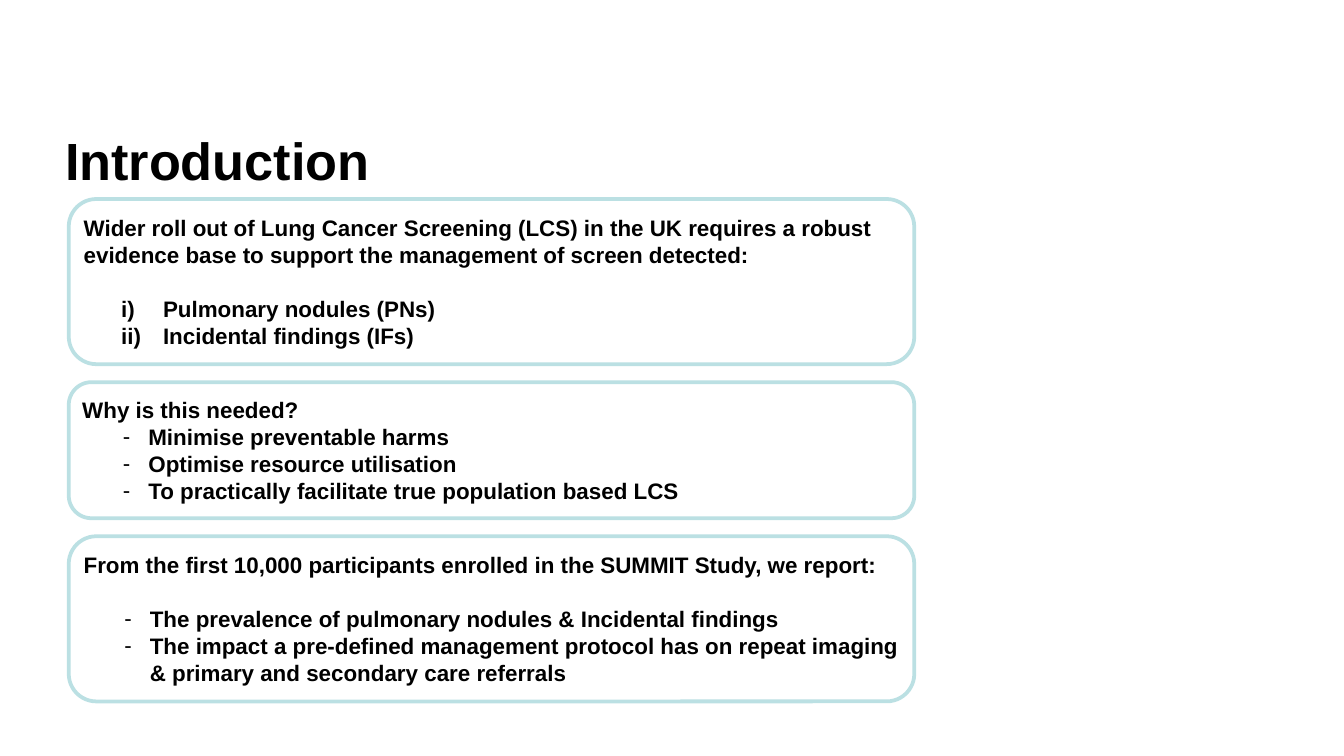
from pptx import Presentation
from pptx.dml.color import RGBColor
from pptx.enum.shapes import MSO_SHAPE as Shape
from pptx.enum.text import MSO_ANCHOR as Anchor, MSO_AUTO_SIZE as AutoSize, PP_ALIGN as Align
from pptx.oxml.ns import qn
from pptx.util import Cm, Pt
from lxml.etree import SubElement

BLACK = RGBColor(0x00, 0x00, 0x00)
WHITE = RGBColor(0xFF, 0xFF, 0xFF)
PALE_TEAL = RGBColor(0xBB, 0xE0, 0xE3)

INSET = Cm(0.13)
FRAME = {
    "word_wrap": True, "auto_size": AutoSize.NONE, "vertical_anchor": Anchor.MIDDLE,
    "margin_left": INSET, "margin_right": INSET, "margin_top": INSET, "margin_bottom": INSET,
}
FONT = {"name": "Arial", "bold": True}
ROMAN = {"tag": "a:buAutoNum", "value": {"type": "romanLcParenR"}, "left": 1.5, "hanging": 0.79}
DASH = {"tag": "a:buChar", "value": {"char": "-"}, "left": 1.25, "hanging": 0.48}

PANELS = [
    (3.12, 14.4, ROMAN,
     "Wider roll out of Lung Cancer Screening (LCS) in the UK requires a robust "
     "evidence base to support the management of screen detected:",
     ["Pulmonary nodules (PNs)", "Incidental findings (IFs)"]),
    (2.57, 0, DASH, "Why is this needed?",
     ["Minimise preventable harms", "Optimise resource utilisation",
      "To practically facilitate true population based LCS"]),
    (3.12, 14.4, DASH,
     "From the first 10,000 participants enrolled in the SUMMIT Study, we report:",
     ["The prevalence of pulmonary nodules & Incidental findings",
      "The impact a pre-defined management protocol has on repeat imaging "
      "& primary and secondary care referrals"]),
]


def format_frame(frame):
    for key, value in FRAME.items():
        setattr(frame, key, value)


def write(paragraph, text, size):
    paragraph.alignment = Align.LEFT
    run = paragraph.add_run()
    run.text = text
    for key, value in FONT.items():
        setattr(run.font, key, value)
    run.font.size = Pt(size)
    run.font.color.rgb = BLACK


deck = Presentation()
deck.slide_width, deck.slide_height = Cm(25.4), Cm(14.28)
slide = deck.slides.add_slide(deck.slide_layouts[5])

heading = slide.shapes.title
heading.left, heading.top, heading.width, heading.height = Cm(1.1), Cm(2.28), Cm(23.2), Cm(1.45)
format_frame(heading.text_frame)
write(heading.text_frame.paragraphs[0], "Introduction", 28)

top, gap = 3.76, 0.34
for height, list_gap, marker, lead, points in PANELS:
    panel = slide.shapes.add_shape(Shape.ROUNDED_RECTANGLE, Cm(1.3), Cm(top), Cm(15.98), Cm(height))
    panel.shadow.inherit = False
    panel.fill.solid()
    panel.fill.fore_color.rgb = WHITE
    panel.line.color.rgb = PALE_TEAL
    panel.line.width = Pt(2)
    format_frame(panel.text_frame)
    write(panel.text_frame.paragraphs[0], lead, 12)
    for index, point in enumerate(points):
        item = panel.text_frame.add_paragraph()
        properties = item._p.get_or_add_pPr()
        properties.set("marL", str(Cm(marker["left"])))
        properties.set("indent", str(-Cm(marker["hanging"])))
        SubElement(properties, qn("a:buFont"), typeface="Arial")
        SubElement(properties, qn(marker["tag"]), marker["value"])
        item.space_before = Pt(0 if index else list_gap)
        write(item, point, 12)
    top += height + gap

deck.save("out.pptx")
